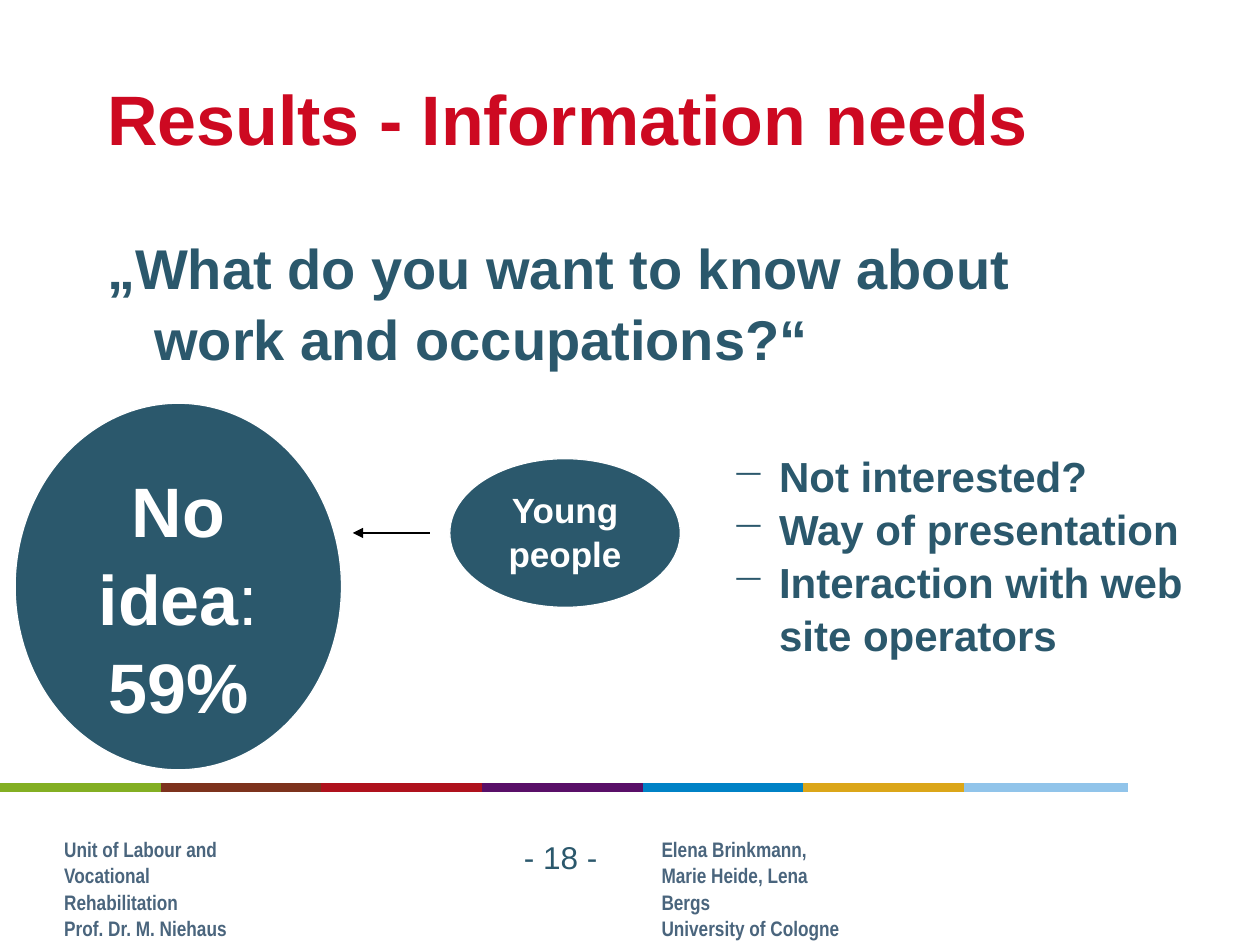
from dataclasses import dataclass
from typing import Any, Optional

import pptx
import pptx.dml.color
import pptx.enum.shapes
import pptx.enum.text
import pptx.oxml
import pptx.oxml.ns
import pptx.util

RGBColor = pptx.dml.color.RGBColor
RED = RGBColor(0xCD, 0x09, 0x21)
TEAL = RGBColor(0x2B, 0x58, 0x6C)
SLATE = RGBColor(0x4A, 0x65, 0x7D)
WHITE = RGBColor(0xFF, 0xFF, 0xFF)
BLACK = RGBColor(0x00, 0x00, 0x00)
STRIPES = [
    RGBColor(0x83, 0xAF, 0x23), RGBColor(0x7D, 0x32, 0x1D),
    RGBColor(0xAF, 0x11, 0x1D), RGBColor(0x59, 0x0F, 0x68),
    RGBColor(0x00, 0x82, 0xC6), RGBColor(0xDB, 0xA6, 0x19),
    RGBColor(0x91, 0xC4, 0xEA),
]

# The page is a grid of 100 columns and 75 rows of equal size
COLUMNS, ROWS = 100, 75
CELL = pptx.util.Inches(0.1)
HANGING = 3.75
LINE_SPACING = 1.05
ALIGN = pptx.enum.text.PP_ALIGN
ANCHOR = pptx.enum.text.MSO_ANCHOR


@dataclass
class Area:
    column: float
    row: float
    columns: float
    rows: float


@dataclass
class Style:
    size: float
    color: RGBColor
    bold: bool = True
    name: str = "Arial"
    align: Any = ALIGN.LEFT
    hanging: float = 0
    bullet: Optional[str] = None


@dataclass
class Bubble:
    area: Area
    size: float
    spans: list


@dataclass
class Footer:
    area: Area
    lines: list


def cells(count: float) -> int:
    return round(count * CELL)


def set_all(target: Any, values: dict) -> None:
    for name, value in values.items():
        setattr(target, name, value)


def place(area: Area) -> list:
    return [cells(n) for n in (area.column, area.row, area.columns, area.rows)]


def add_tag(parent: Any, tag: str, **values: str) -> Any:
    element = pptx.oxml.ns.qn(tag)
    return parent.append(parent.makeelement(element, values))


def write(box: Any, paragraphs: list, style: Style, frame: dict) -> None:
    """Fill a box; each paragraph is a list of (text, bold) spans."""
    set_all(box.text_frame, {"word_wrap": True, "vertical_anchor": ANCHOR.TOP, **frame})
    for number, spans in enumerate(paragraphs):
        para = box.text_frame.paragraphs[0] if number == 0 else box.text_frame.add_paragraph()
        set_all(para, {"alignment": style.align, "line_spacing": LINE_SPACING,
                       "space_before": pptx.util.Pt(0)})
        properties = para._p.get_or_add_pPr()
        properties.set("marL", str(cells(style.hanging)))
        properties.set("indent", str(-cells(style.hanging)))
        if style.bullet:
            add_tag(properties, "a:buChar", char=style.bullet)
        else:
            add_tag(properties, "a:buNone")
        for text, bold in spans:
            span = para.add_run()
            span.text = text
            set_all(span.font, {"name": style.name, "size": pptx.util.Pt(style.size),
                                "bold": bold})
            span.font.color.rgb = style.color


def plain(lines: list, style: Style) -> list:
    return [[(line, style.bold)] for line in lines]


def add_text(page: Any, area: Area, lines: list, style: Style, **frame: Any) -> None:
    write(page.shapes.add_textbox(*place(area)), plain(lines, style), style, frame)


def fill_placeholder(box: Any, area: Area, text: str, style: Style, **frame: Any) -> None:
    set_all(box, dict(zip(("left", "top", "width", "height"), place(area))))
    write(box, plain([text], style), style, frame)


def add_bubble(page: Any, bubble: Bubble) -> None:
    oval = page.shapes.add_shape(pptx.enum.shapes.MSO_SHAPE.OVAL, *place(bubble.area))
    oval.shadow.inherit = False
    oval.fill.solid()
    oval.fill.fore_color.rgb = TEAL
    oval.line.color.rgb = WHITE
    oval.line.width = pptx.util.Pt(0.75)
    write(oval, [bubble.spans], Style(bubble.size, WHITE, align=ALIGN.CENTER), {})


def add_line(page: Any, start: float, end: float, row: float,
             color: RGBColor, width: float, arrow: bool = False) -> None:
    line = page.shapes.add_connector(pptx.enum.shapes.MSO_CONNECTOR.STRAIGHT,
                                     cells(start), cells(row), cells(end), cells(row))
    line.line.color.rgb = color
    line.line.width = pptx.util.Pt(width)
    if arrow:
        add_tag(line.line._get_or_add_ln(), "a:tailEnd", type="triangle")
    add_tag(line._element.spPr, "a:effectLst")


def main() -> None:
    deck = pptx.Presentation()
    set_all(deck, {"slide_width": cells(COLUMNS), "slide_height": cells(ROWS)})
    page = deck.slides.add_slide(deck.slide_layouts[1])
    title, body = page.placeholders

    # Coloured stripe above the footer
    for number, color in enumerate(STRIPES):
        start = number * 12.75
        add_line(page, start, start + 13, 62.5, color, 5.5)

    # Footer: two credits around the page number
    footers = [
        Footer(Area(5.1, 65.8, 15.8, 5),
               ["Unit of Labour and Vocational Rehabilitation", "Prof. Dr. M. Niehaus"]),
        Footer(Area(52.5, 65.8, 15.8, 5),
               ["Elena Brinkmann, Marie Heide, Lena Bergs", "University of Cologne"]),
    ]
    for footer in footers:
        add_text(page, footer.area, footer.lines, Style(12, SLATE, name="Arial Narrow"),
                 word_wrap=False, margin_left=0)
    add_text(page, Area(40.6, 65.9, 11, 4), ["- 18 -"], Style(18, TEAL, bold=False))

    # Title and question
    fill_placeholder(title, Area(7.5, 2.9, 85, 12.5), "Results - Information needs",
                     Style(40, RED), vertical_anchor=ANCHOR.MIDDLE)
    fill_placeholder(body, Area(7.5, 17.8, 85, 43.3),
                     "„What do you want to know about work and occupations?“",
                     Style(32, TEAL, hanging=HANGING))

    # Answer of the young people
    bubbles = [
        Bubble(Area(35.7, 36.4, 18.3, 11.8), 20, [("Young people", True)]),
        Bubble(Area(1.2, 32, 25.9, 29.1), 40,
               [("No idea", True), (": ", False), ("59%", True)]),
    ]
    for bubble in bubbles:
        add_bubble(page, bubble)
    add_line(page, 34.1, 28, 42.3, BLACK, 0.75, arrow=True)

    # Possible reasons
    add_text(page, Area(57.1, 35.1, 38.6, 21.2),
             ["Not interested?", "Way of presentation", "Interaction with web site operators"],
             Style(24, TEAL, hanging=HANGING, bullet="−"))

    deck.save("out.pptx")


if __name__ == "__main__":
    main()
